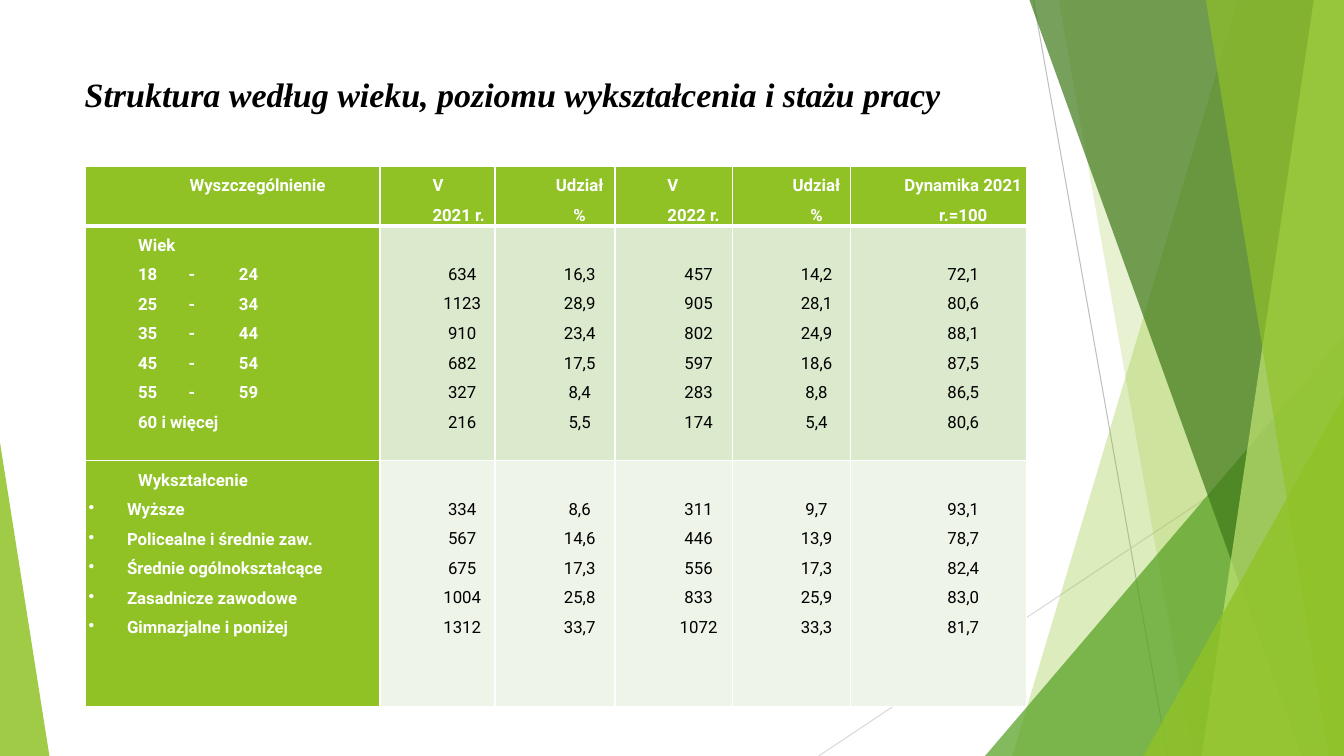
from lxml.etree import SubElement
from pptx import Presentation
from pptx.dml.color import RGBColor
from pptx.enum.shapes import MSO_CONNECTOR, MSO_SHAPE
from pptx.enum.text import MSO_ANCHOR, PP_ALIGN
from pptx.oxml.ns import qn
from pptx.util import Inches, Pt

WHITE = RGBColor(0xFF, 0xFF, 0xFF)
BLACK = RGBColor(0x00, 0x00, 0x00)
LIME = RGBColor(0x90, 0xC2, 0x26)
GREEN = RGBColor(0x54, 0xA0, 0x21)
DARK_GREEN = RGBColor(0x3F, 0x78, 0x19)
PALE_LIME = RGBColor(0xC0, 0xE4, 0x74)
BAND_DARK = RGBColor(0xDB, 0xE9, 0xCD)
BAND_LIGHT = RGBColor(0xEE, 0xF4, 0xE8)
GRAY = RGBColor(0xBF, 0xBF, 0xBF)
LIGHT_GRAY = RGBColor(0xD9, 0xD9, 0xD9)

WIDTH, HEIGHT = 13.33, 7.5
INDENT = 0.49
LINE_HEIGHT = 0.29
COLUMN_WIDTHS = [2.92, 1.14, 1.19, 1.17, 1.17, 1.74]
ROW_HEIGHTS = [0.59, 2.33, 2.44]

HEADERS = [["Wyszczególnienie"], ["V", "2021 r."], ["Udział", "%"],
           ["V", "2022 r."], ["Udział", "%"], ["Dynamika 2021 r.=100"]]
AGES = [
    ("18\t-\t24", "634", "16,3", "457", "14,2", "72,1"),
    ("25\t-\t34", "1123", "28,9", "905", "28,1", "80,6"),
    ("35\t-\t44", "910", "23,4", "802", "24,9", "88,1"),
    ("45\t-\t54", "682", "17,5", "597", "18,6", "87,5"),
    ("55\t-\t59", "327", "8,4", "283", "8,8", "86,5"),
    ("60 i więcej", "216", "5,5", "174", "5,4", "80,6"),
]
EDUCATION = [
    ("Wyższe", "334", "8,6", "311", "9,7", "93,1"),
    ("Policealne i średnie zaw.", "567", "14,6", "446", "13,9", "78,7"),
    ("Średnie ogólnokształcące", "675", "17,3", "556", "17,3", "82,4"),
    ("Zasadnicze zawodowe", "1004", "25,8", "833", "25,9", "83,0"),
    ("Gimnazjalne i poniżej", "1312", "33,7", "1072", "33,3", "81,7"),
]


def add_line(page, start, end, color):
    line = page.shapes.add_connector(
        MSO_CONNECTOR.STRAIGHT, *(Inches(value) for value in start + end))
    line.line.color.rgb = color
    line.line.width = Pt(0.75)
    SubElement(line.element.spPr, qn("a:effectLst"))


def paint(shape, color, opacity):
    shape.shadow.inherit = False
    shape.fill.solid()
    shape.fill.fore_color.rgb = color
    shape.line.fill.background()
    tint = shape.element.spPr.find(".//" + qn("a:srgbClr"))
    SubElement(tint, qn("a:alpha"), val=str(opacity * 1000))


def add_band(page, top_left, bottom_left, color, opacity):
    """A band from a slanted left edge to the right edge of the page."""
    corners = [(top_left, 0), (WIDTH, 0), (WIDTH, HEIGHT), (bottom_left, HEIGHT)]
    points = [(Inches(x), Inches(y)) for x, y in corners]
    builder = page.shapes.build_freeform(*points[0], scale=1.0)
    builder.add_line_segments(points[1:], close=True)
    paint(builder.convert_to_shape(), color, opacity)


def add_triangle(page, left, top, width, apex, color, opacity):
    """A right triangle standing on the bottom of the page."""
    shape = page.shapes.add_shape(
        MSO_SHAPE.ISOSCELES_TRIANGLE, Inches(left), Inches(top),
        Inches(width), Inches(HEIGHT - top))
    shape.adjustments[0] = apex
    paint(shape, color, opacity)


def add_decoration(page):
    add_line(page, (10.25, 0), (11.58, HEIGHT), GRAY)
    add_line(page, (WIDTH, 4.03), (8.12, HEIGHT), LIGHT_GRAY)
    add_band(page, 12.28, 10.04, LIME, 30)
    add_band(page, 10.5, 11.83, LIME, 20)
    add_triangle(page, 9.77, 3.33, 3.56, 1, GREEN, 72)
    add_band(page, 10.21, 12.91, DARK_GREEN, 70)
    add_band(page, 13.03, 11.92, PALE_LIME, 70)
    add_band(page, 11.96, 13.18, LIME, 65)
    add_triangle(page, 11.34, 3.93, 1.99, 1, LIME, 80)
    add_triangle(page, 0, 4.39, 0.49, 0, LIME, 85)


def set_title(page, text):
    title = page.shapes.title
    title.left, title.top = Inches(0.74), Inches(0.67)
    title.width, title.height = Inches(9.4), Inches(0.53)
    title.text_frame.vertical_anchor = MSO_ANCHOR.MIDDLE
    para = title.text_frame.paragraphs[0]
    para.text = text
    para.alignment = PP_ALIGN.LEFT
    font = para.font
    font.name, font.size = "Times New Roman", Pt(24.3)
    font.bold = font.italic = True
    font.color.rgb = BLACK


def set_borders(cell, widths):
    properties = cell._tc.get_or_add_tcPr()
    for side, width in widths.items():
        line = SubElement(properties, qn("a:ln" + side), w=str(Pt(width)))
        fill = SubElement(line, qn("a:solidFill"))
        SubElement(fill, qn("a:srgbClr"), val=str(WHITE))


def format_paragraph(para, color, bold, align, bullet=False):
    para.alignment = align
    para.line_spacing = 1.5
    properties = para._p.get_or_add_pPr()
    indent = 0.38 if bullet else INDENT
    properties.set("marL", str(Inches(indent)))
    properties.set("indent", str(Inches(-indent if bullet else 0)))
    if bullet:
        SubElement(properties, qn("a:buChar"), char="•")
    elif "\t" in para.text:
        stops = SubElement(properties, qn("a:tabLst"))
        for position in (0.8, 1.0):
            SubElement(stops, qn("a:tab"), pos=str(Inches(position)), algn="l")
    font = para.font
    font.name, font.size, font.bold = "Roboto", Pt(12), bold
    font.color.rgb = color


def fill_cell(cell, lines, fill, color, bold, align, skipped=0, bulleted=False):
    cell.margin_left = cell.margin_right = Inches(0.03)
    cell.margin_top, cell.margin_bottom = Inches(skipped * LINE_HEIGHT), 0
    cell.fill.solid()
    cell.fill.fore_color.rgb = fill
    cell.text = "\n".join(lines)
    for index, para in enumerate(cell.text_frame.paragraphs):
        format_paragraph(para, color, bold, align, bulleted and index > 0)


def fill_group(table, row, heading, records, fill, bulleted):
    labels, *columns = zip(*records)
    fill_cell(table.cell(row, 0), [heading, *labels], LIME, WHITE, True,
              PP_ALIGN.LEFT, bulleted=bulleted)
    for column, values in enumerate(columns, start=1):
        fill_cell(table.cell(row, column), values, fill, BLACK, False,
                  PP_ALIGN.CENTER, skipped=1)


def add_structure_table(page):
    table = page.shapes.add_table(
        len(ROW_HEIGHTS), len(COLUMN_WIDTHS), Inches(0.85), Inches(1.65),
        Inches(sum(COLUMN_WIDTHS)), Inches(sum(ROW_HEIGHTS))).table
    table.horz_banding = False
    for column, width in zip(table.columns, COLUMN_WIDTHS):
        column.width = Inches(width)
    for index, (row, height) in enumerate(zip(table.rows, ROW_HEIGHTS)):
        row.height = Inches(height)
        for cell in row.cells:
            set_borders(cell, {"L": 1, "R": 1, "T": 3 if index == 1 else 1,
                               "B": 3 if index == 0 else 1})

    # Header row, then one tall row for each group
    for column, lines in enumerate(HEADERS):
        align = PP_ALIGN.LEFT if lines[0] == "V" else PP_ALIGN.CENTER
        fill_cell(table.cell(0, column), lines, LIME, WHITE, True, align)
    fill_group(table, 1, "Wiek", AGES, BAND_DARK, bulleted=False)
    fill_group(table, 2, "Wykształcenie", EDUCATION, BAND_LIGHT, bulleted=True)


def main():
    deck = Presentation()
    deck.slide_width, deck.slide_height = Inches(WIDTH), Inches(HEIGHT)
    page = deck.slides.add_slide(deck.slide_layouts[5])
    add_decoration(page)
    set_title(page, "Struktura według wieku, poziomu wykształcenia i stażu pracy")
    add_structure_table(page)
    deck.save("out.pptx")


if __name__ == "__main__":
    main()
